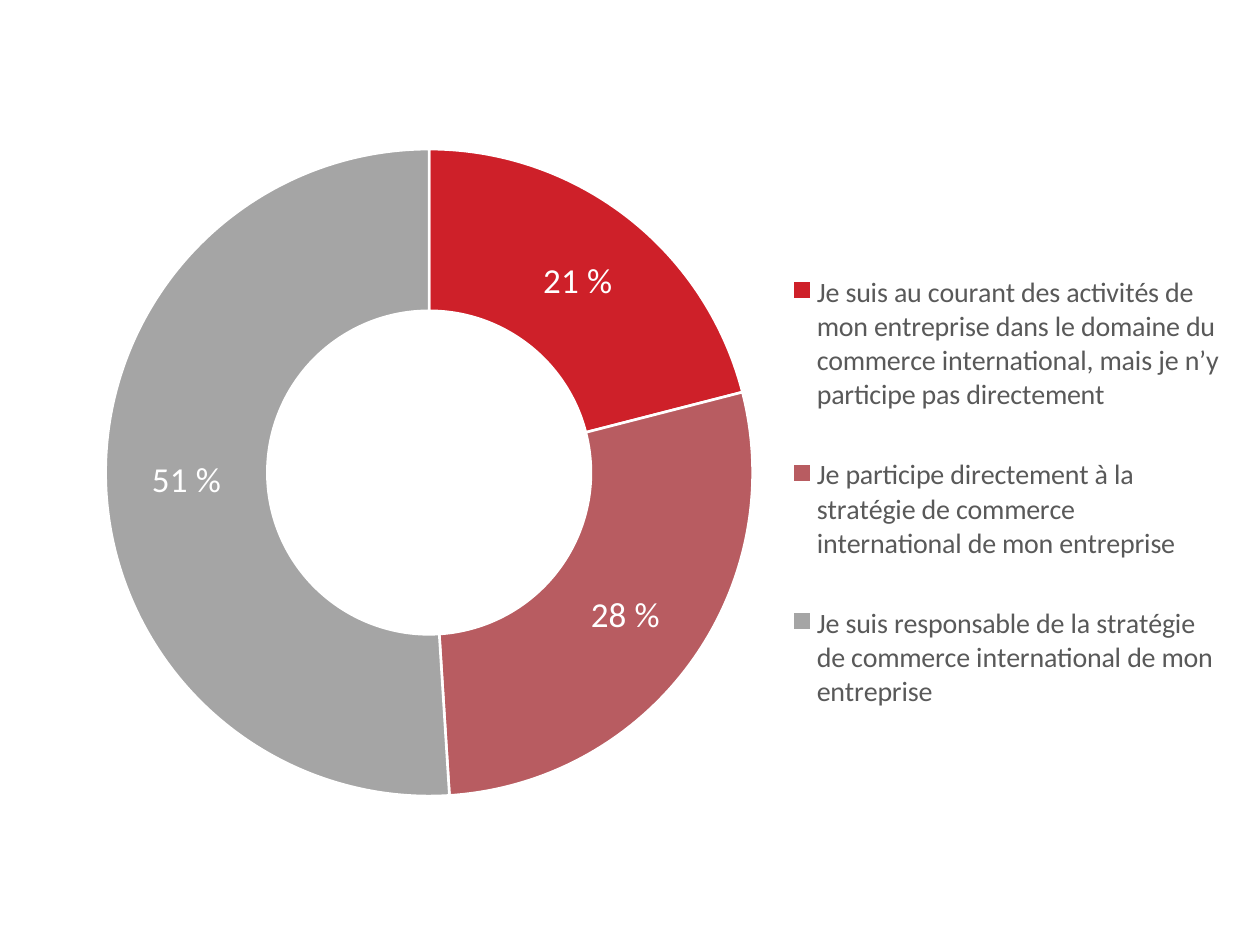
from dataclasses import dataclass

from lxml import etree
from pptx import Presentation
from pptx.chart.data import CategoryChartData
from pptx.dml.color import RGBColor
from pptx.enum.chart import XL_CHART_TYPE, XL_LEGEND_POSITION
from pptx.oxml import parse_xml
from pptx.oxml.ns import nsdecls, qn
from pptx.util import Inches, Pt

DOUGHNUT = XL_CHART_TYPE.DOUGHNUT
LEGEND_RIGHT = XL_LEGEND_POSITION.RIGHT


@dataclass(frozen=True)
class Theme:
    font: str = "Calibri"
    aware: RGBColor = RGBColor(0xCE, 0x20, 0x29)
    involved: RGBColor = RGBColor(0x9A, 0x18, 0x1F)
    responsible: RGBColor = RGBColor(0xA5, 0xA5, 0xA5)
    legend: RGBColor = RGBColor(0x59, 0x59, 0x59)
    white: RGBColor = RGBColor(0xFF, 0xFF, 0xFF)
    black: RGBColor = RGBColor(0, 0, 0)
    base_size: Pt = Pt(10)
    legend_size: Pt = Pt(16)
    label_size: Pt = Pt(20)
    border: Pt = Pt(1.5)


def style_font(font, size, color):
    font.name = THEME.font
    font.size = size
    font.color.rgb = color


def manual_layout(x, y, w, h, target=""):
    return parse_xml(
        f'<c:layout {nsdecls("c")}><c:manualLayout>{target}'
        '<c:xMode val="edge"/><c:yMode val="edge"/>'
        f'<c:x val="{x}"/><c:y val="{y}"/><c:w val="{w}"/><c:h val="{h}"/>'
        '</c:manualLayout></c:layout>'
    )


THEME = Theme()
ROLES = [
    ("Je suis au courant des activités de mon entreprise dans le domaine du "
     "commerce international, mais je n’y participe pas directement", 0.21, THEME.aware),
    ("Je participe directement à la stratégie de commerce international "
     "de mon entreprise", 0.28, THEME.involved),
    ("Je suis responsable de la stratégie de commerce international "
     "de mon entreprise", 0.51, THEME.responsible),
]

prs = Presentation()
prs.slide_width = Inches(10)
prs.slide_height = Inches(7.5)
slide = prs.slides.add_slide(prs.slide_layouts[6])

role_data = CategoryChartData(number_format="0%")
role_data.categories = [role for role, share, color in ROLES]
role_data.add_series("Series 1", [share for role, share, color in ROLES])
chart = slide.shapes.add_chart(
    DOUGHNUT, Inches(0.17), Inches(1.13), Inches(9.66), Inches(5.35), role_data
).chart
chart.has_title = False
style_font(chart.font, THEME.base_size, THEME.black)

ring = chart.plots[0]
ring.vary_by_categories = True
ring._element.find(qn("c:holeSize")).set("val", "63")
for index, (role, share, color) in enumerate(ROLES):
    segment = ring.series[0].points[index].format
    segment.fill.solid()
    segment.fill.fore_color.rgb = color
    segment.line.color.rgb = THEME.white
    segment.line.width = THEME.border

involved_fill = ring.series[0].points[1].format.fill._xPr.find(qn("a:solidFill"))
etree.SubElement(involved_fill[0], qn("a:alpha")).set("val", "70000")

ring.has_data_labels = True
labels = ring.data_labels
labels.show_value = True
labels.show_percentage = False
labels.number_format = "0 %"
labels.number_format_is_linked = False
style_font(labels.font, THEME.label_size, THEME.white)

chart.has_legend = True
legend = chart.legend
legend.position = LEGEND_RIGHT
legend.include_in_layout = False
style_font(legend.font, THEME.legend_size, THEME.legend)

plot_area = chart._chartSpace.chart.plotArea
for old_layout in plot_area.findall(qn("c:layout")):
    plot_area.remove(old_layout)
plot_area.insert(0, manual_layout(0.06, 0.01, 0.55, 0.96, '<c:layoutTarget val="inner"/>'))
for old_layout in legend._element.findall(qn("c:layout")):
    legend._element.remove(old_layout)
legend._element.find(qn("c:legendPos")).addnext(manual_layout(0.64, 0.13, 0.35, 0.78))

prs.save("out.pptx")
